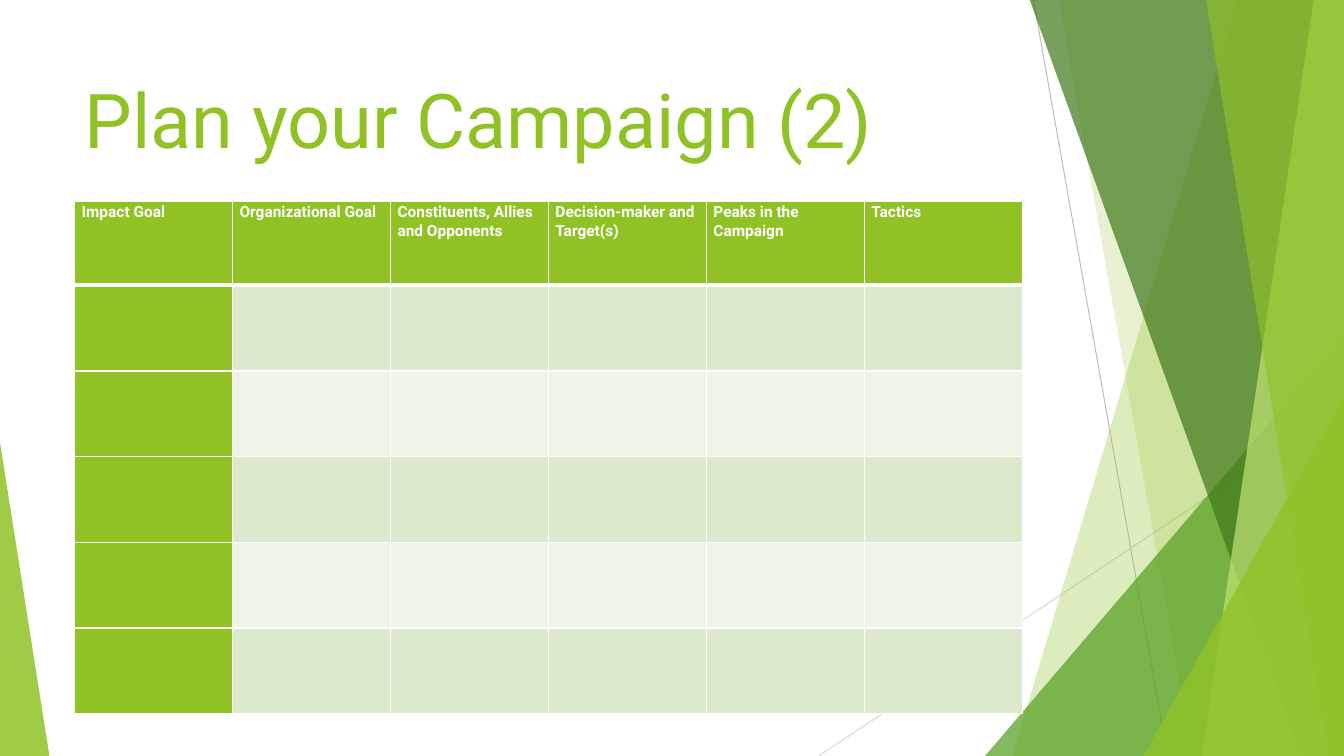
from dataclasses import dataclass

import pptx
import pptx.dml.color
import pptx.enum.shapes
import pptx.enum.text
import pptx.oxml
import pptx.oxml.ns
import pptx.util
from pptx.util import Inches

WIDTH, HEIGHT = 13.33, 7.5
PANE_TOP = -0.01
FONT = "Roboto"
COLORS = {
    "lime": "90C226",
    "leaf": "54A021",
    "forest": "3F7819",
    "pale lime": "C0E474",
    "band dark": "DBE9CD",
    "band light": "EEF4E8",
    "white": "FFFFFF",
    "line dark": "BFBFBF",
    "line light": "D9D9D9",
}
HEADINGS = [
    "Impact Goal",
    "Organizational Goal",
    "Constituents, Allies and Opponents",
    "Decision-maker and Target(s)",
    "Peaks in the Campaign",
    "Tactics",
]
COLUMN_WIDTH = 9.4 / len(HEADINGS)
ROW_HEIGHTS = [0.83] + [0.85] * 5


@dataclass
class Ray:
    start: tuple[float, float]
    end: tuple[float, float]
    color: str


@dataclass
class Pane:
    """Sheet from a slanted left edge to the right side of the slide."""
    top_x: float
    bottom_x: float
    color: str
    opacity: int


@dataclass
class Wedge:
    """Right triangle standing on the bottom of the slide."""
    left: float
    top: float
    width: float
    apex: float
    color: str
    opacity: int


RAYS = [
    Ray((10.25, 0), (11.58, HEIGHT), "line dark"),
    Ray((WIDTH, 4.03), (8.12, HEIGHT), "line light"),
]
FACETS = [
    Pane(12.28, 10.04, "lime", 30),
    Pane(10.5, 11.83, "lime", 20),
    Wedge(9.77, 3.33, 3.56, 1, "leaf", 72),
    Pane(10.21, 12.91, "forest", 70),
    Pane(13.03, 11.92, "pale lime", 70),
    Pane(11.96, 13.18, "lime", 65),
    Wedge(11.34, 3.93, 1.99, 1, "lime", 80),
    Wedge(0, 4.39, 0.49, 0, "lime", 85),
]


def rgb(name: str) -> pptx.dml.color.RGBColor:
    return pptx.dml.color.RGBColor.from_string(COLORS[name])


def add_ray(page, ray: Ray) -> None:
    line = page.shapes.add_connector(
        pptx.enum.shapes.MSO_CONNECTOR.STRAIGHT,
        *(Inches(value) for value in ray.start + ray.end))
    line.line.color.rgb = rgb(ray.color)
    line.line.width = pptx.util.Pt(0.75)
    pptx.oxml.ns  # namespace helpers
    line._element.spPr.append(
        pptx.oxml.parse_xml(f'<a:effectLst {pptx.oxml.ns.nsdecls("a")}/>'))


def add_facet(page, facet: Pane | Wedge) -> None:
    if isinstance(facet, Pane):
        builder = page.shapes.build_freeform(
            Inches(facet.top_x), Inches(PANE_TOP))
        corners = [(WIDTH, PANE_TOP), (WIDTH, HEIGHT), (facet.bottom_x, HEIGHT)]
        builder.add_line_segments([(Inches(x), Inches(y)) for x, y in corners])
        shape = builder.convert_to_shape()
    else:
        shape = page.shapes.add_shape(
            pptx.enum.shapes.MSO_SHAPE.ISOSCELES_TRIANGLE,
            Inches(facet.left), Inches(facet.top),
            Inches(facet.width), Inches(HEIGHT - facet.top))
        shape.adjustments[0] = facet.apex
    shape.shadow.inherit = False
    shape.line.fill.background()
    shape.fill.solid()
    shape.fill.fore_color.rgb = rgb(facet.color)
    color = shape._element.spPr.find(".//" + pptx.oxml.ns.qn("a:srgbClr"))
    color.append(pptx.oxml.parse_xml(
        f'<a:alpha {pptx.oxml.ns.nsdecls("a")} val="{facet.opacity * 1000}"/>'))


def add_title(page, text: str) -> None:
    box = page.shapes.add_textbox(
        Inches(0.74), Inches(0.67), Inches(9.4), Inches(1.44))
    box.text_frame.word_wrap = True
    para = box.text_frame.paragraphs[0]
    para.text = text
    para.font.name = FONT
    para.font.size = pptx.util.Pt(54)
    para.font.color.rgb = rgb("lime")


def set_borders(cell, bottom: int, top: int) -> None:
    properties = cell._tc.get_or_add_tcPr()
    sides = {"lnL": 1, "lnR": 1, "lnT": top, "lnB": bottom}
    for position, (side, width) in enumerate(sides.items()):
        properties.insert(position, pptx.oxml.parse_xml(
            f'<a:{side} {pptx.oxml.ns.nsdecls("a")} w="{pptx.util.Pt(width)}">'
            f'<a:solidFill><a:srgbClr val="{COLORS["white"]}"/></a:solidFill>'
            f'</a:{side}>'))


def cell_color(row: int, column: int) -> str:
    if row == 0 or column == 0:
        return "lime"
    return "band dark" if row % 2 else "band light"


def add_plan(page) -> None:
    table = page.shapes.add_table(
        len(ROW_HEIGHTS), len(HEADINGS), Inches(0.74), Inches(2),
        Inches(9.4), Inches(sum(ROW_HEIGHTS))).table
    table.first_col = True
    for column in table.columns:
        column.width = Inches(COLUMN_WIDTH)
    for row, height in enumerate(ROW_HEIGHTS):
        table.rows[row].height = Inches(height)
        for column, heading in enumerate(HEADINGS):
            cell = table.cell(row, column)
            cell.fill.solid()
            cell.fill.fore_color.rgb = rgb(cell_color(row, column))
            set_borders(cell, bottom=1 if row else 3, top=3 if row == 1 else 1)
            cell.margin_left = cell.margin_right = Inches(0.07)
            cell.margin_top = cell.margin_bottom = 0
            para = cell.text_frame.paragraphs[0]
            para.font.name = FONT
            para.font.size = pptx.util.Pt(11)
            if row == 0:
                para.text = heading
                para.line_spacing = 1.07
                para.font.bold = True
                para.font.color.rgb = rgb("white")


def main() -> None:
    deck = pptx.Presentation()
    deck.slide_width, deck.slide_height = Inches(WIDTH), Inches(HEIGHT)
    page = deck.slides.add_slide(deck.slide_layouts[6])

    # Background rays and translucent facets
    for ray in RAYS:
        add_ray(page, ray)
    for facet in FACETS:
        add_facet(page, facet)

    # Title and planning table
    add_title(page, "Plan your Campaign (2)")
    add_plan(page)

    deck.save("out.pptx")


if __name__ == "__main__":
    main()
